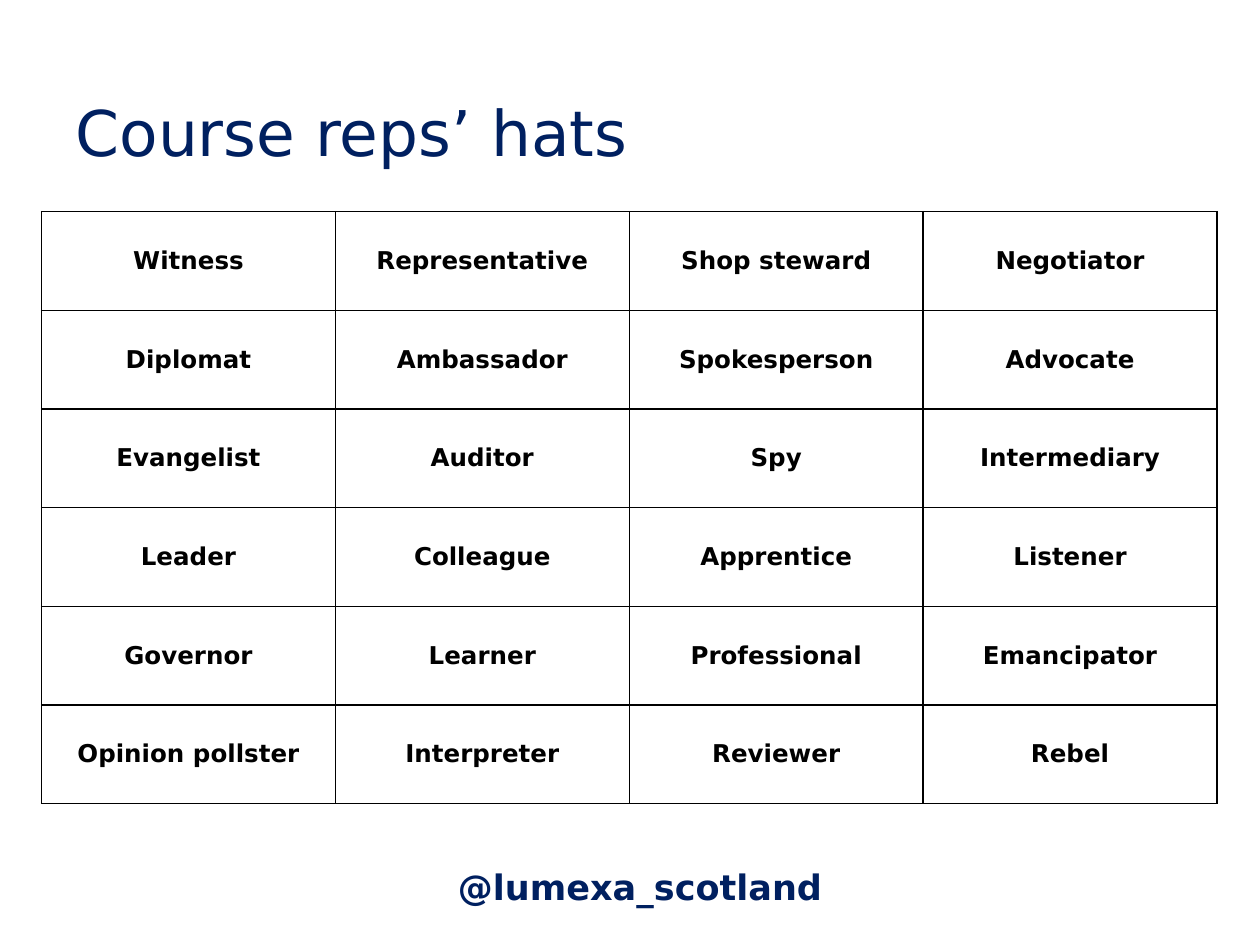
from dataclasses import dataclass

from lxml.etree import SubElement
from pptx import Presentation
from pptx.dml.color import RGBColor
from pptx.enum.text import MSO_ANCHOR, MSO_AUTO_SIZE, PP_ALIGN
from pptx.oxml.ns import qn
from pptx.util import Inches, Pt

FONT = "DejaVu Sans"
NAVY = RGBColor(0x00, 0x20, 0x60)
BLACK = RGBColor(0x00, 0x00, 0x00)
WHITE = RGBColor(0xFF, 0xFF, 0xFF)

HATS = [
    ["Witness", "Representative", "Shop steward", "Negotiator"],
    ["Diplomat", "Ambassador", "Spokesperson", "Advocate"],
    ["Evangelist", "Auditor", "Spy", "Intermediary"],
    ["Leader", "Colleague", "Apprentice", "Listener"],
    ["Governor", "Learner", "Professional", "Emancipator"],
    ["Opinion pollster", "Interpreter", "Reviewer", "Rebel"],
]


@dataclass(frozen=True)
class TextStyle:
    size: int
    color: RGBColor
    bold: bool
    align: PP_ALIGN


TITLE = TextStyle(36, NAVY, False, PP_ALIGN.LEFT)
HANDLE = TextStyle(20, NAVY, True, PP_ALIGN.CENTER)
HAT = TextStyle(14, BLACK, True, PP_ALIGN.CENTER)


def write(tf, text: str, style: TextStyle) -> None:
    tf.text = text
    p = tf.paragraphs[0]
    p.alignment = style.align
    p.font.name = FONT
    p.font.size = Pt(style.size)
    p.font.bold = style.bold
    p.font.color.rgb = style.color


def add_borders(cell, color: RGBColor, width: float) -> None:
    tc_pr = cell._tc.get_or_add_tcPr()
    for i, side in enumerate(("lnL", "lnR", "lnT", "lnB")):
        ln = SubElement(tc_pr, qn(f"a:{side}"), w=str(Pt(width)))
        fill = SubElement(ln, qn("a:solidFill"))
        SubElement(fill, qn("a:srgbClr"), val=str(color))
        tc_pr.insert(i, ln)


def add_title(slide, text: str) -> None:
    sp = slide.shapes.title
    sp.left, sp.top = Inches(0.5), Inches(0.3)
    sp.width, sp.height = Inches(7.26), Inches(1.48)
    sp.text_frame.vertical_anchor = MSO_ANCHOR.MIDDLE
    write(sp.text_frame, text, TITLE)


def add_handle(slide, text: str) -> None:
    sp = slide.shapes.add_textbox(Inches(3.19), Inches(6.82), Inches(3.78), Inches(0.44))
    tf = sp.text_frame
    tf.word_wrap = True
    tf.auto_size = MSO_AUTO_SIZE.SHAPE_TO_FIT_TEXT
    write(tf, text, HANDLE)


def add_hats(slide, rows: list[list[str]]) -> None:
    table = slide.shapes.add_table(
        len(rows), len(rows[0]), Inches(0.33), Inches(1.68), Inches(9.33), Inches(4.7)
    ).table
    table.first_row = False
    table.horz_banding = False
    for r, row in enumerate(rows):
        for c, hat in enumerate(row):
            cell = table.cell(r, c)
            cell.vertical_anchor = MSO_ANCHOR.MIDDLE
            cell.fill.solid()
            cell.fill.fore_color.rgb = WHITE
            add_borders(cell, BLACK, 1)
            write(cell.text_frame, hat, HAT)


def main() -> None:
    prs = Presentation()
    prs.slide_width, prs.slide_height = Inches(10), Inches(7.5)
    s = prs.slides.add_slide(prs.slide_layouts[5])
    add_handle(s, "@lumexa_scotland")
    add_title(s, "Course reps’ hats")
    add_hats(s, HATS)
    prs.save("out.pptx")


if __name__ == "__main__":
    main()
